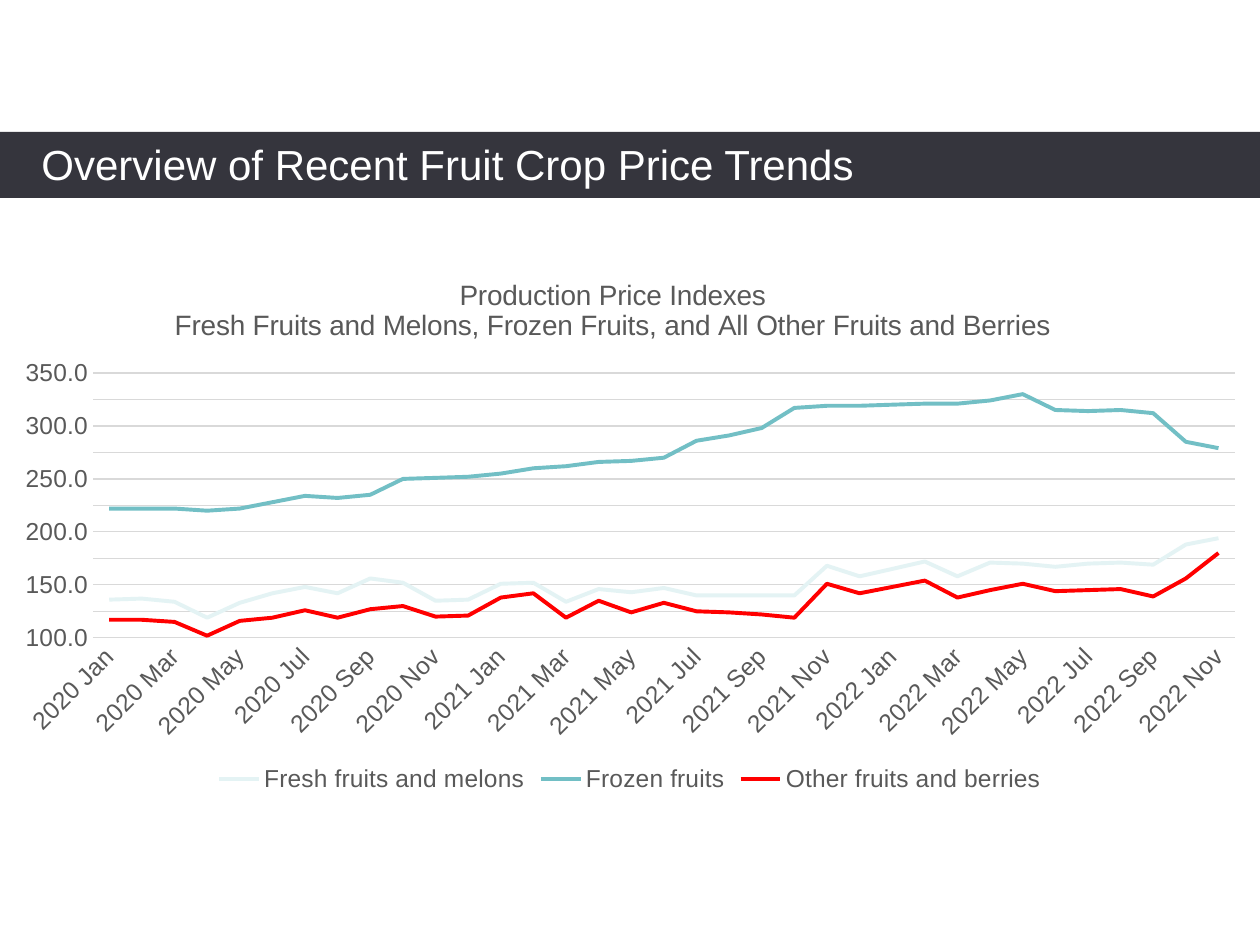
"""Build a slide with a title band and a line chart of fruit price indexes."""
from dataclasses import dataclass
from typing import Any

from lxml import etree
from pptx import Presentation
from pptx.chart.data import CategoryChartData
from pptx.dml.color import RGBColor
from pptx.enum.chart import XL_CHART_TYPE, XL_LEGEND_POSITION, XL_TICK_MARK
from pptx.enum.shapes import MSO_SHAPE
from pptx.oxml.ns import qn
from pptx.util import Emu, Pt

LINE = XL_CHART_TYPE.LINE
BOTTOM = XL_LEGEND_POSITION.BOTTOM
NO_TICK = XL_TICK_MARK.NONE
RECT = MSO_SHAPE.RECTANGLE

PX_PER_INCH = 126
FONT = "Arial"
WHITE, BAND, GREY, GRID = "FFFFFF", "35353D", "595959", "D9D9D9"
MONTHS = "Jan Feb Mar Apr May Jun Jul Aug Sep Oct Nov Dec".split()
CATEGORIES = [f"{year} {month}" for year in (2020, 2021, 2022) for month in MONTHS][:-1]
TITLE = "Overview of Recent Fruit Crop Price Trends"
CHART_TITLE = (
    "Production Price Indexes",
    "Fresh Fruits and Melons, Frozen Fruits, and All Other Fruits and Berries",
)


@dataclass(frozen=True)
class Box:
    """Position and size in px."""
    left: int
    top: int
    width: int
    height: int

    def emu(self) -> tuple[Emu, ...]:
        """Return the four lengths in EMU."""
        return tuple(px(n) for n in (self.left, self.top, self.width, self.height))


@dataclass(frozen=True)
class PriceSeries:
    """One price index line."""
    name: str
    color: str
    values: tuple[int, ...]


CHART_BOX = Box(0, 252, 1260, 546)
PLOT_BOX = Box(93, 373, 1142, 265)
SERIES = (
    PriceSeries("Fresh fruits and melons", "E4F3F4", (
        136, 137, 134, 119, 133, 142, 148, 142, 156, 152, 135, 136,
        151, 152, 134, 146, 143, 147, 140, 140, 140, 140, 168, 158,
        165, 172, 158, 171, 170, 167, 170, 171, 169, 188, 194)),
    PriceSeries("Frozen fruits", "72BFC5", (
        222, 222, 222, 220, 222, 228, 234, 232, 235, 250, 251, 252,
        255, 260, 262, 266, 267, 270, 286, 291, 298, 317, 319, 319,
        320, 321, 321, 324, 330, 315, 314, 315, 312, 285, 279)),
    PriceSeries("Other fruits and berries", "FF0000", (
        117, 117, 115, 102, 116, 119, 126, 119, 127, 130, 120, 121,
        138, 142, 119, 135, 124, 133, 125, 124, 122, 119, 151, 142,
        148, 154, 138, 145, 151, 144, 145, 146, 139, 156, 180)),
)


def px(n: int) -> Emu:
    """Turn px into EMU."""
    return Emu(round(n * 914400 / PX_PER_INCH))


def rgb(color: str) -> RGBColor:
    """Turn a hex string into a colour."""
    return RGBColor.from_string(color)


def set_all(target: Any, values: dict[str, Any]) -> None:
    """Set several attributes of an object."""
    for name, value in values.items():
        setattr(target, name, value)


def style_font(font: Any, size: int, color: str) -> None:
    """Set face, size and colour of a font."""
    set_all(font, {"name": FONT, "size": Pt(size), "bold": False})
    font.color.rgb = rgb(color)


def style_line(line: Any, color: str, width: float) -> None:
    """Set colour and width of a line."""
    line.color.rgb = rgb(color)
    line.width = Pt(width)


def set_layout(parent: Any, index: int, fractions: dict[str, float], inner: bool = False) -> None:
    """Place a chart part by fractions of the chart area."""
    for old in parent.findall(qn("c:layout")):
        parent.remove(old)
    layout = etree.Element(qn("c:layout"))
    parent.insert(index, layout)
    manual = etree.SubElement(layout, qn("c:manualLayout"))
    values = {"layoutTarget": "inner"} if inner else {}
    values |= {"xMode": "edge", "yMode": "edge"}
    values |= {name: f"{value:.4f}" for name, value in fractions.items()}
    for name, value in values.items():
        etree.SubElement(manual, qn(f"c:{name}")).set("val", value)


def add_title(s: Any) -> None:
    """Draw the dark band and the slide title."""
    band = s.shapes.add_shape(RECT, *Box(0, 132, 1261, 66).emu())
    band.shadow.inherit = False
    band.fill.solid()
    band.fill.fore_color.rgb = rgb(BAND)
    band.line.fill.background()
    tf = s.shapes.add_textbox(*Box(29, 132, 1155, 63).emu()).text_frame
    tf.word_wrap = True
    r = tf.paragraphs[0].add_run()
    r.text = TITLE
    style_font(r.font, 24, WHITE)


def style_axes(chart: Any) -> None:
    """Format both axes and the gridlines."""
    months, prices = chart.category_axis, chart.value_axis
    for axis in (months, prices):
        set_all(axis, {"major_tick_mark": NO_TICK, "minor_tick_mark": NO_TICK})
        style_font(axis.tick_labels.font, 14, GREY)
    months.has_major_gridlines = False
    style_line(months.format.line, GRID, 0.75)
    months.tick_labels._element.find(qn("c:txPr")).find(qn("a:bodyPr")).set("rot", "-2700000")
    set_all(prices, {"minimum_scale": 100, "maximum_scale": 350, "major_unit": 25,
                     "has_major_gridlines": True})
    set_all(prices.tick_labels, {"number_format": "#0.0", "number_format_is_linked": False})
    style_line(prices.major_gridlines.format.line, GRID, 0.75)
    prices.format.line.fill.background()


def add_price_chart(s: Any) -> None:
    """Draw the line chart with its title and legend."""
    data = CategoryChartData(number_format="#0.0")
    data.categories = CATEGORIES
    for item in SERIES:
        data.add_series(item.name, item.values)
    chart = s.shapes.add_chart(LINE, *CHART_BOX.emu(), data).chart
    style_font(chart.font, 14, "000000")
    set_all(chart, {"has_title": True, "has_legend": True})

    tf = chart.chart_title.text_frame
    for i, text in enumerate(CHART_TITLE):
        p = tf.add_paragraph() if i else tf.paragraphs[0]
        r = p.add_run()
        r.text = text
        style_font(r.font, 16, GREY)
    set_layout(chart.chart_title._element, 1, {"x": 0.1357, "y": 0.04})

    set_all(chart.legend, {"position": BOTTOM, "include_in_layout": False})
    style_font(chart.legend.font, 14, GREY)
    style_axes(chart)

    plot = chart.plots[0]
    plot.vary_by_categories = False
    set_layout(plot._element.getparent(), 0, {
        "x": (PLOT_BOX.left - CHART_BOX.left) / CHART_BOX.width,
        "y": (PLOT_BOX.top - CHART_BOX.top) / CHART_BOX.height,
        "w": PLOT_BOX.width / CHART_BOX.width,
        "h": PLOT_BOX.height / CHART_BOX.height,
    }, inner=True)
    for line, item in zip(plot.series, SERIES):
        line.smooth = False
        style_line(line.format.line, item.color, 2.25)


def main() -> None:
    """Build and save the slide."""
    prs = Presentation()
    set_all(prs, {"slide_width": px(1260), "slide_height": px(945)})
    s = prs.slides.add_slide(prs.slide_layouts[6])
    add_title(s)
    add_price_chart(s)
    prs.save("out.pptx")


if __name__ == "__main__":
    main()
